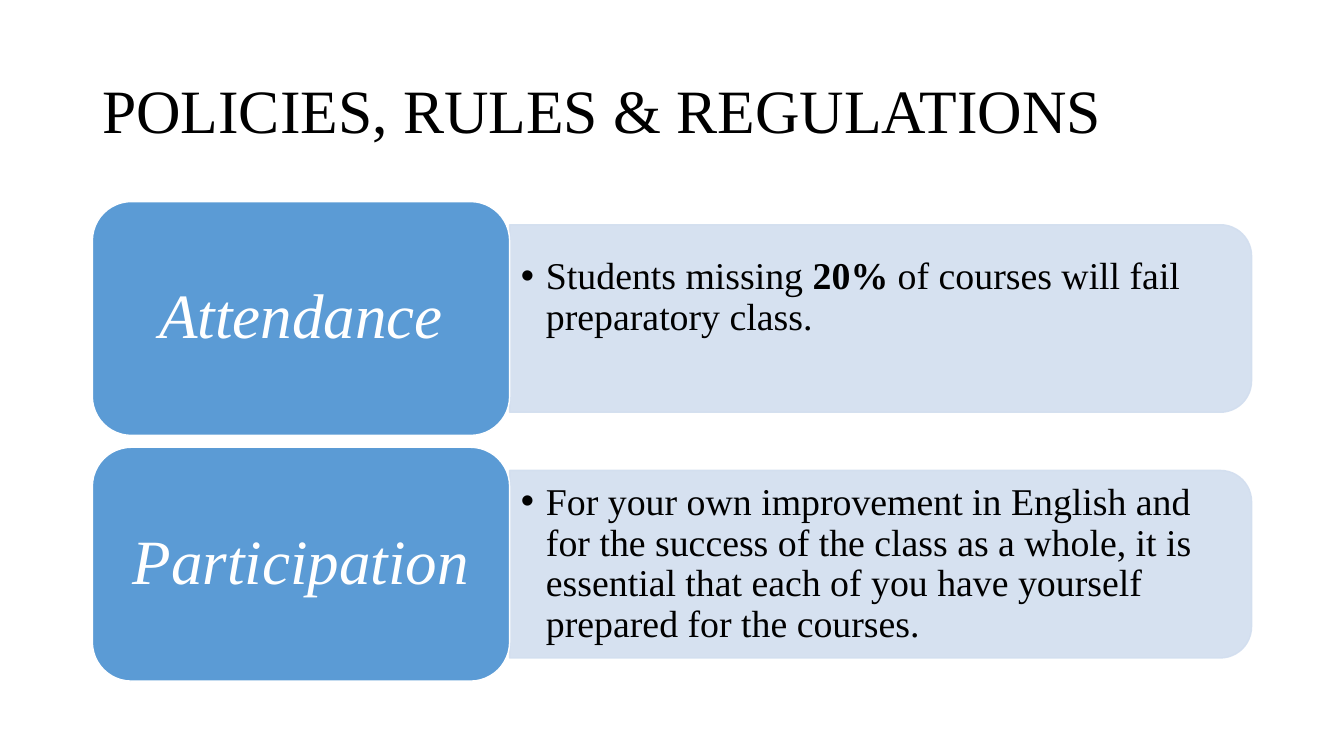
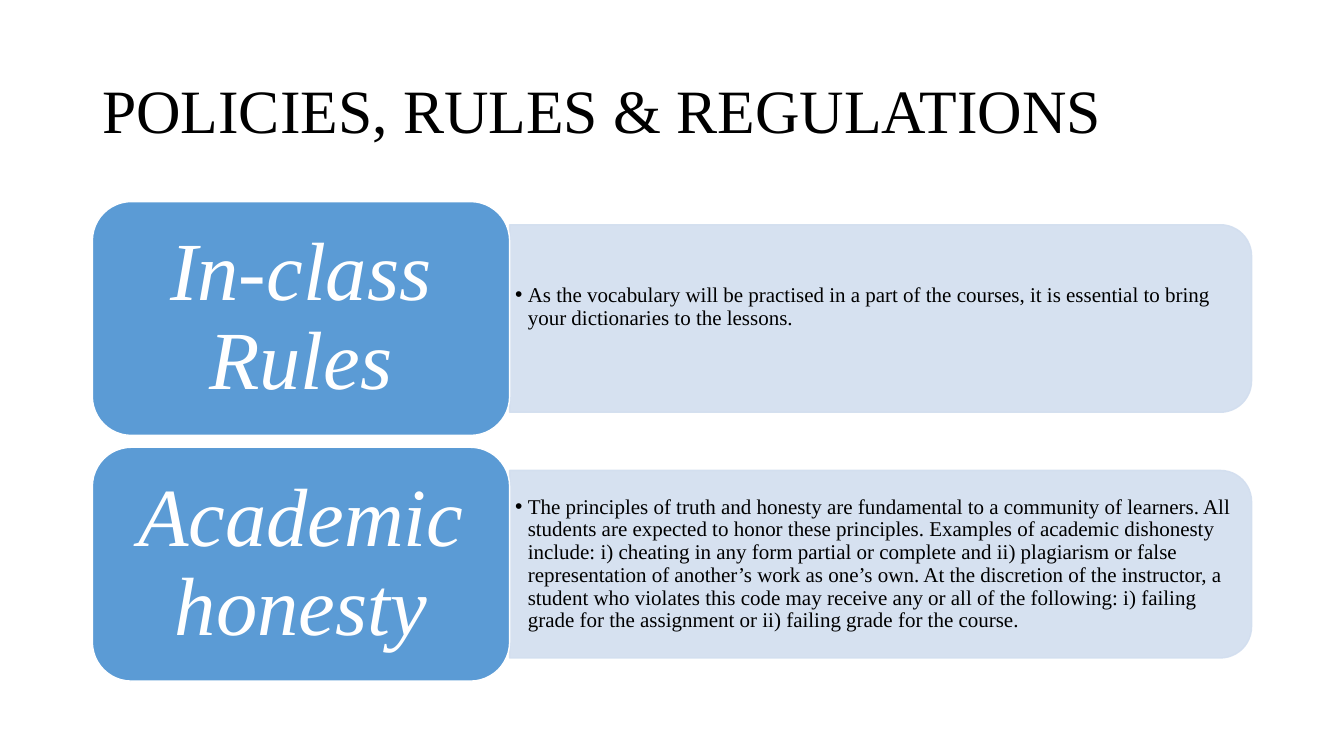
from dataclasses import dataclass

from lxml.etree import SubElement
from pptx import Presentation
from pptx.dml.color import RGBColor
from pptx.enum.shapes import MSO_SHAPE
from pptx.enum.text import MSO_ANCHOR, MSO_AUTO_SIZE, PP_ALIGN
from pptx.oxml.ns import qn
from pptx.shapes.autoshape import Shape
from pptx.slide import Slide
from pptx.text.text import TextFrame, _Paragraph
from pptx.util import Emu, Pt

FONT = "Times New Roman"
BLACK = RGBColor(0x00, 0x00, 0x00)
WHITE = RGBColor(0xFF, 0xFF, 0xFF)
BLUE = RGBColor(0x5B, 0x9B, 0xD5)
PALE = RGBColor(0xD2, 0xDE, 0xEF)

TITLE = "POLICIES, RULES & REGULATIONS"
LEFT, TOP, PITCH = 132, 288, 351
LABEL_W, LABEL_H = 596, 334
PANEL_W, PANEL_H = 1060, 268
TEXT_W, TEXT_H = 1047, 242


@dataclass(frozen=True)
class Rule:
    label: str
    spans: tuple[str, ...]
    lifted: bool = False


@dataclass(frozen=True)
class Page:
    label_size: int
    label_pad: tuple[int, int]
    text_size: int
    text_pad: tuple[int, int]
    indent: int
    rules: tuple[Rule, ...]


PAGES = (
    Page(45, (27, 13), 27, (16, 8), 36, (
        Rule("Attendance",
             ("Students missing ", "20% ", "of courses will fail preparatory class."),
             lifted=True),
        Rule("Participation",
             ("For your own improvement in English and for the success of the "
              "class as a whole, it is essential that each of you have yourself "
              "prepared for the courses.",)),
    )),
    Page(59, (36, 18), 15, (8, 4), 18, (
        Rule("In-class Rules",
             ("As the vocabulary will be practised in a part of the courses, it "
              "is essential to bring your dictionaries to the lessons.",),
             lifted=True),
        Rule("Academic honesty",
             ("The principles of truth and honesty are fundamental to a community "
              "of learners. All students are expected to honor these principles. "
              "Examples of academic dishonesty include: i) cheating in any form "
              "partial or complete and ii) plagiarism or false representation of "
              "another’s work as one’s own. At the discretion of the instructor, a "
              "student who violates this code may receive any or all of the "
              "following: i) failing grade for the assignment or ii) failing grade "
              "for the course.",)),
    )),
)


def px(count: int) -> Emu:
    return Emu(count * 6350)


def place(shape: Shape, left: int, top: int, width: int, height: int) -> None:
    shape.left, shape.top = px(left), px(top)
    shape.width, shape.height = px(width), px(height)


def set_frame(frame: TextFrame, pad: tuple[int, int], lift: int = 0) -> None:
    frame.word_wrap = True
    frame.auto_size = MSO_AUTO_SIZE.NONE
    frame.vertical_anchor = MSO_ANCHOR.MIDDLE
    frame.margin_left = frame.margin_right = px(pad[0])
    frame.margin_top = px(pad[1])
    frame.margin_bottom = px(pad[1] + lift)


def style(para: _Paragraph, size: int, color: RGBColor, align: PP_ALIGN) -> None:
    para.alignment = align
    para.line_spacing = 0.9
    para.space_before = para.space_after = Pt(0)
    for run in para.runs:
        run.font.name = FONT
        run.font.size = Pt(size)
        run.font.color.rgb = color


def add_block(slide: Slide, kind: MSO_SHAPE, box: tuple[int, int, int, int],
              fill: RGBColor, line: RGBColor) -> Shape:
    block = slide.shapes.add_shape(kind, *map(px, box))
    block.shadow.inherit = False
    block.fill.solid()
    block.fill.fore_color.rgb = fill
    block.line.color.rgb = line
    block.line.width = Pt(1)
    return block


def add_panel(slide: Slide, left: int, mid: int) -> None:
    box = (left + (PANEL_W - PANEL_H) // 2, mid - PANEL_W // 2, PANEL_H, PANEL_W)
    panel = add_block(slide, MSO_SHAPE.ROUND_2_SAME_RECTANGLE, box, PALE, PALE)
    panel.rotation = 90
    for color in panel._element.spPr.iter(qn("a:srgbClr")):
        SubElement(color, qn("a:alpha"), val="90000")


def fill_list(slide: Slide, holder: Shape, page: Page, rule: Rule,
              left: int, mid: int) -> None:
    place(holder, left, mid - TEXT_H // 2, TEXT_W, TEXT_H)
    lift = round(page.text_size * 2.2) if rule.lifted else 0
    set_frame(holder.text_frame, page.text_pad, lift)
    para = holder.text_frame.paragraphs[0]
    for spot, span in enumerate(rule.spans):
        run = para.add_run()
        run.text = span
        run.font.bold = spot % 2 == 1
    style(para, page.text_size, BLACK, PP_ALIGN.LEFT)
    props = para._p.get_or_add_pPr()
    props.set("marL", str(px(page.indent)))
    props.set("indent", str(-px(page.indent)))
    SubElement(props, qn("a:buChar"), char="•")
    slide.shapes._spTree.append(holder._element)


def add_label(slide: Slide, page: Page, text: str, top: int) -> None:
    box = (LEFT, top, LABEL_W, LABEL_H)
    label = add_block(slide, MSO_SHAPE.ROUNDED_RECTANGLE, box, BLUE, WHITE)
    set_frame(label.text_frame, page.label_pad)
    label.text_frame.text = text
    para = label.text_frame.paragraphs[0]
    style(para, page.label_size, WHITE, PP_ALIGN.CENTER)
    para.runs[0].font.italic = True


def add_title(slide: Slide) -> None:
    title = slide.shapes.title
    place(title, LEFT, 58, 1656, 209)
    set_frame(title.text_frame, (14, 7))
    title.text_frame.text = TITLE
    style(title.text_frame.paragraphs[0], 44, BLACK, PP_ALIGN.LEFT)


def main() -> None:
    deck = Presentation()
    deck.slide_width, deck.slide_height = px(1920), px(1080)
    for page in PAGES:
        slide = deck.slides.add_slide(deck.slide_layouts[3])
        add_title(slide)
        lists = list(slide.placeholders)[1:]
        for row, (rule, holder) in enumerate(zip(page.rules, lists)):
            top = TOP + row * PITCH
            mid = top + LABEL_H // 2
            left = LEFT + LABEL_W
            add_panel(slide, left, mid)
            fill_list(slide, holder, page, rule, left, mid)
            add_label(slide, page, rule.label, top)
    deck.save("out.pptx")


if __name__ == "__main__":
    main()
